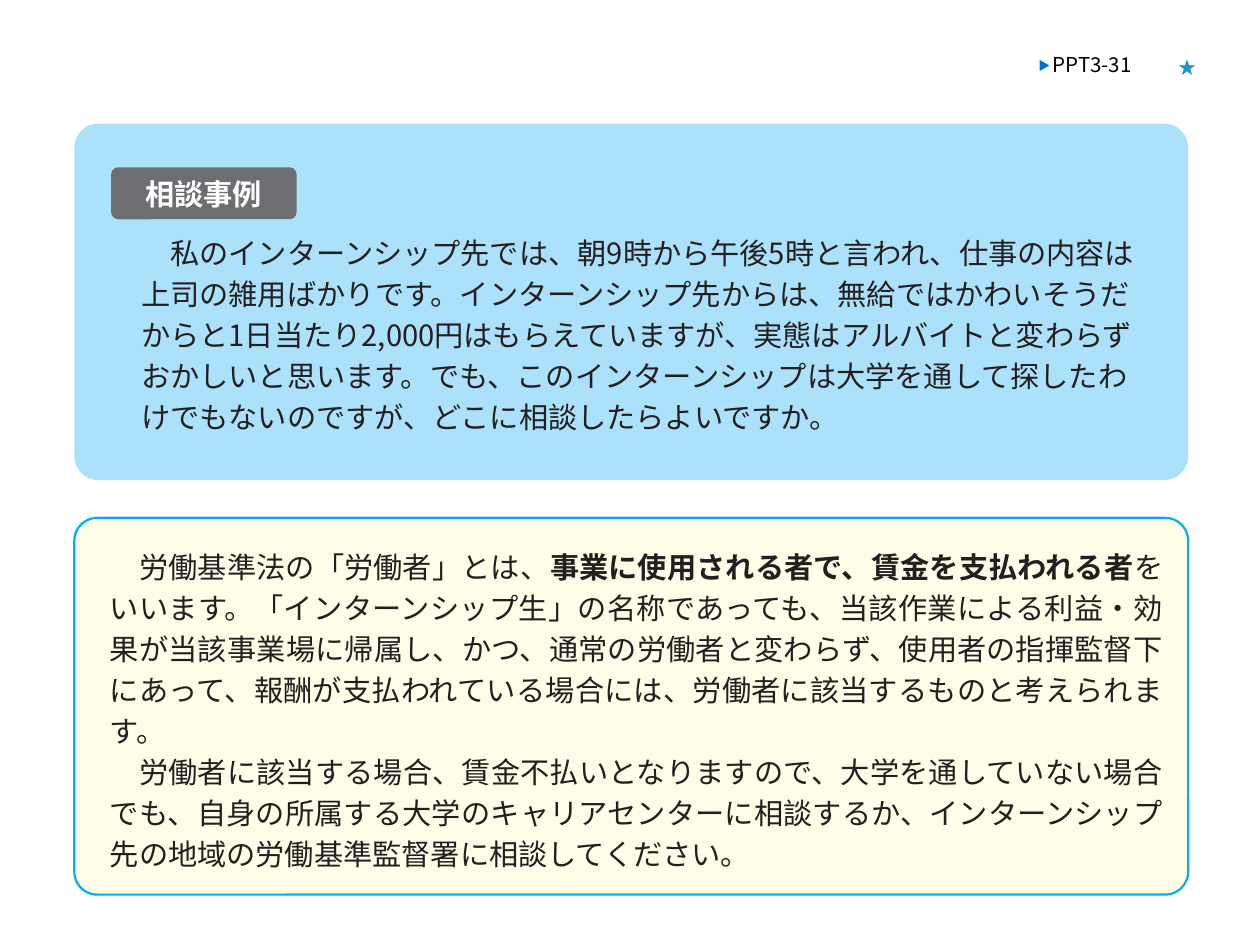
from lxml.etree import SubElement
from pptx import Presentation
from pptx.dml.color import RGBColor
from pptx.enum.shapes import MSO_SHAPE
from pptx.enum.text import MSO_ANCHOR, MSO_AUTO_SIZE, PP_ALIGN
from pptx.oxml.ns import qn
from pptx.util import Pt

FONT = "Noto Sans CJK JP"
TEXT_SIZE = 16.7
COLORS = {
    "ink": "231F20", "black": "000000", "white": "FFFFFF", "label": "6D6E71",
    "case": "ABE1FA", "answer": "FFFDE8", "border": "00B0F0",
    "marker": "0070C0", "star": "1B93C9",
}
CASE = (
    "私のインターンシップ先では、朝9時から午後5時と言われ、仕事の内容は上司の雑用ばかりです。"
    "インターンシップ先からは、無給ではかわいそうだからと1日当たり2,000円はもらえていますが、"
    "実態はアルバイトと変わらずおかしいと思います。でも、このインターンシップは大学を通して"
    "探したわけでもないのですが、どこに相談したらよいですか。"
)
DEFINITION = [
    ("労働基準法の「労働者」とは、", {}),
    ("事業に使用される者で、賃金を支払われる者", {"bold": True}),
    ("をいいます。「インターンシップ生」の名称であっても、当該作業による利益・効果が"
     "当該事業場に帰属し、かつ、通常の労働者と変わらず、使用者の指揮監督下にあって、"
     "報酬が支払われている場合には、労働者に該当するものと考えられます。", {}),
]
ADVICE = (
    "労働者に該当する場合、賃金不払いとなりますので、大学を通していない場合でも、"
    "自身の所属する大学のキャリアセンターに相談するか、インターンシップ先の地域の"
    "労働基準監督署に相談してください。"
)


def rgb(name):
    return RGBColor.from_string(COLORS[name])


def add_span(para, text, size=TEXT_SIZE, color="ink", bold=False, baseline=None):
    span = para.add_run()
    span.text = text
    span.font.size, span.font.bold, span.font.name = Pt(size), bold, FONT
    span.font.color.rgb = rgb(color)
    properties = span.font._element
    SubElement(properties, qn("a:ea")).set("typeface", FONT)
    if baseline:
        properties.set("baseline", str(baseline))


def write_text(shape, box, paragraphs, align=PP_ALIGN.LEFT, spacing=1.0,
               before=0, indent=0, inset=0.7):
    """Place the shape and fill it; a paragraph is a list of (text, format) pairs."""
    shape.left, shape.top, shape.width, shape.height = map(Pt, box)
    frame = shape.text_frame
    frame.word_wrap = True
    frame.auto_size = MSO_AUTO_SIZE.NONE
    frame.vertical_anchor = MSO_ANCHOR.TOP
    frame.margin_left = frame.margin_right = frame.margin_bottom = 0
    frame.margin_top = Pt(inset)
    for index, spans in enumerate(paragraphs):
        para = frame.add_paragraph() if index else frame.paragraphs[0]
        para.alignment, para.line_spacing = align, spacing
        para.space_before = Pt(0 if index else before)
        properties = para._p.get_or_add_pPr()
        properties.set("marL", "0")
        properties.set("indent", str(int(Pt(indent))))
        SubElement(properties, qn("a:buNone"))
        for text, style in spans:
            add_span(para, text, **style)


def add_text_box(page):
    return page.shapes.add_textbox(0, 0, 0, 0)


def add_panel(page, box, radius, fill, line=None):
    """Rounded panel whose corner radius is given in points."""
    left, top, width, height = box
    panel = page.shapes.add_shape(MSO_SHAPE.ROUNDED_RECTANGLE, *map(Pt, box))
    panel.adjustments[0] = radius / min(width, height)
    panel.shadow.inherit = False
    panel.fill.solid()
    panel.fill.fore_color.rgb = rgb(fill)
    if line:
        panel.line.color.rgb = rgb(line)
        panel.line.width = Pt(1.25)
    else:
        panel.line.fill.background()


def bring_to_front(shape):
    shape.element.getparent().append(shape.element)


def build_page_mark(page, left, top):
    write_text(add_text_box(page), (left, top, 71, 15),
               [[("▶ ", {"size": 11.7, "color": "marker", "baseline": 9000}),
                 ("PPT3-31", {"size": 11.7, "color": "black"})]], before=1)
    write_text(add_text_box(page), (left + 80, top, 20, 19),
               [[("★", {"size": 10.3, "color": "star"})]], inset=3.6)


def build_case(page, box):
    left, top, width, height = box
    add_panel(page, box, 13.9, "case")
    write_text(add_text_box(page), (left + 38.2, top + 59.7, 573.8, 116),
               [[(CASE, {})]], spacing=1.17, before=0.8, indent=TEXT_SIZE)
    add_panel(page, (left + 21, top + 25, 106, 29.7), 4, "label")
    title = page.shapes.title
    write_text(title, (left + 21, top + 28.6, 106, 22),
               [[("相談事例", {"color": "white", "bold": True})]],
               align=PP_ALIGN.CENTER, before=1.1, inset=1.4)
    bring_to_front(title)


def build_answer(page, box):
    left, top, width, height = box
    add_panel(page, box, 13.1, "answer", line="border")
    body = page.placeholders[1]
    write_text(body, (left + 20.3, top + 13.7, 602, 187),
               [DEFINITION, [(ADVICE, {})]], align=PP_ALIGN.JUSTIFY,
               spacing=1.17, before=0.8, indent=TEXT_SIZE)
    bring_to_front(body)


def main():
    deck = Presentation()
    deck.slide_width, deck.slide_height = Pt(720), Pt(540)
    page = deck.slides.add_slide(deck.slide_layouts[1])
    build_case(page, (42.5, 70.6, 636.5, 203.8))
    build_answer(page, (42.5, 295.9, 636.5, 215.3))
    build_page_mark(page, 593.3, 28.8)
    deck.save("out.pptx")


if __name__ == "__main__":
    main()
